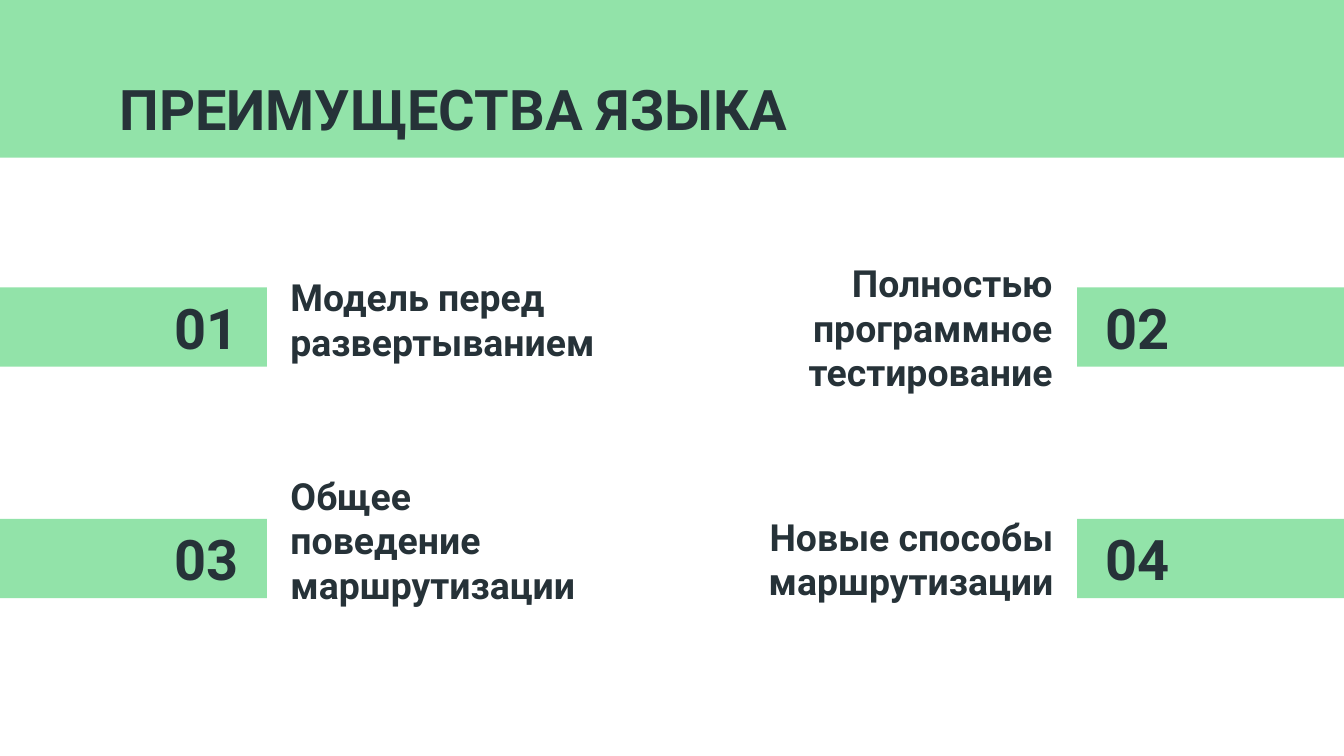
from dataclasses import dataclass

from pptx import Presentation
from pptx.dml.color import RGBColor
from pptx.enum.shapes import MSO_SHAPE
from pptx.enum.text import MSO_ANCHOR, PP_ALIGN
from pptx.slide import Slide
from pptx.util import Emu, Inches, Pt

RECTANGLE = MSO_SHAPE.RECTANGLE
MIDDLE = MSO_ANCHOR.MIDDLE
LEFT, CENTER, RIGHT = PP_ALIGN.LEFT, PP_ALIGN.CENTER, PP_ALIGN.RIGHT

PX = 6350  # 144 px to the inch
PAGE_WIDTH, PAGE_HEIGHT = 1440, 810
HEADER_HEIGHT = 169
BAND_WIDTH, BAND_HEIGHT = 286, 85
NUMBER_WIDTH, NUMBER_HEIGHT = 130, 62
CAPTION_HEIGHT = 45
INSET = Inches(0.1)
FONT = "Roboto"
COLORS = {"green": "92E3A9", "ink": "263238"}


@dataclass(frozen=True)
class Area:
    left: int
    top: int
    width: int
    height: int

    def emu(self) -> tuple[Emu, ...]:
        return tuple(Emu(n * PX) for n in (self.left, self.top, self.width, self.height))


@dataclass(frozen=True)
class Advantage:
    number: str
    caption: str
    on_right: bool
    band_top: int
    caption_left: int
    caption_top: int
    caption_width: int


ADVANTAGES = [
    Advantage("01", "Модель перед развертыванием", False, 308, 297, 319, 369),
    Advantage("02", "Полностью программное тестирование", True, 308, 756, 328, 386),
    Advantage("03", "Общее поведение маршрутизации", False, 556, 297, 556, 369),
    Advantage("04", "Новые способы маршрутизации", True, 556, 774, 576, 369),
]


def add_band(page: Slide, area: Area) -> None:
    band = page.shapes.add_shape(RECTANGLE, *area.emu())
    band.shadow.inherit = False
    band.fill.solid()
    band.fill.fore_color.rgb = RGBColor.from_string(COLORS["green"])
    band.line.fill.background()


def add_text(page: Slide, area: Area, text: str, size: int, align: PP_ALIGN) -> None:
    box = page.shapes.add_textbox(*area.emu())
    frame = box.text_frame
    frame.word_wrap = True
    frame.vertical_anchor = MIDDLE
    frame.margin_left = frame.margin_right = INSET
    frame.margin_top = frame.margin_bottom = INSET
    para = frame.paragraphs[0]
    para.text = text
    para.alignment = align
    para.font.name = FONT
    para.font.size = Pt(size)
    para.font.bold = True
    para.font.color.rgb = RGBColor.from_string(COLORS["ink"])


def add_advantage(page: Slide, item: Advantage) -> None:
    """Draw a band from the page edge, its number at the inner end, and the caption."""
    band_left = PAGE_WIDTH - BAND_WIDTH if item.on_right else 0
    number_left = band_left if item.on_right else BAND_WIDTH - NUMBER_WIDTH
    number_top = item.band_top + (BAND_HEIGHT - NUMBER_HEIGHT) // 2
    add_band(page, Area(band_left, item.band_top, BAND_WIDTH, BAND_HEIGHT))
    add_text(page, Area(number_left, number_top, NUMBER_WIDTH, NUMBER_HEIGHT),
             item.number, 30, CENTER)
    add_text(page, Area(item.caption_left, item.caption_top, item.caption_width, CAPTION_HEIGHT),
             item.caption, 20, RIGHT if item.on_right else LEFT)


def main() -> None:
    deck = Presentation()
    deck.slide_width, deck.slide_height = Emu(PAGE_WIDTH * PX), Emu(PAGE_HEIGHT * PX)
    page = deck.slides.add_slide(deck.slide_layouts[6])
    add_band(page, Area(0, 0, PAGE_WIDTH, HEADER_HEIGHT))
    add_text(page, Area(114, 70, 1214, 91), "ПРЕИМУЩЕСТВА ЯЗЫКА", 30, LEFT)
    for item in ADVANTAGES:
        add_advantage(page, item)
    deck.save("out.pptx")


if __name__ == "__main__":
    main()
